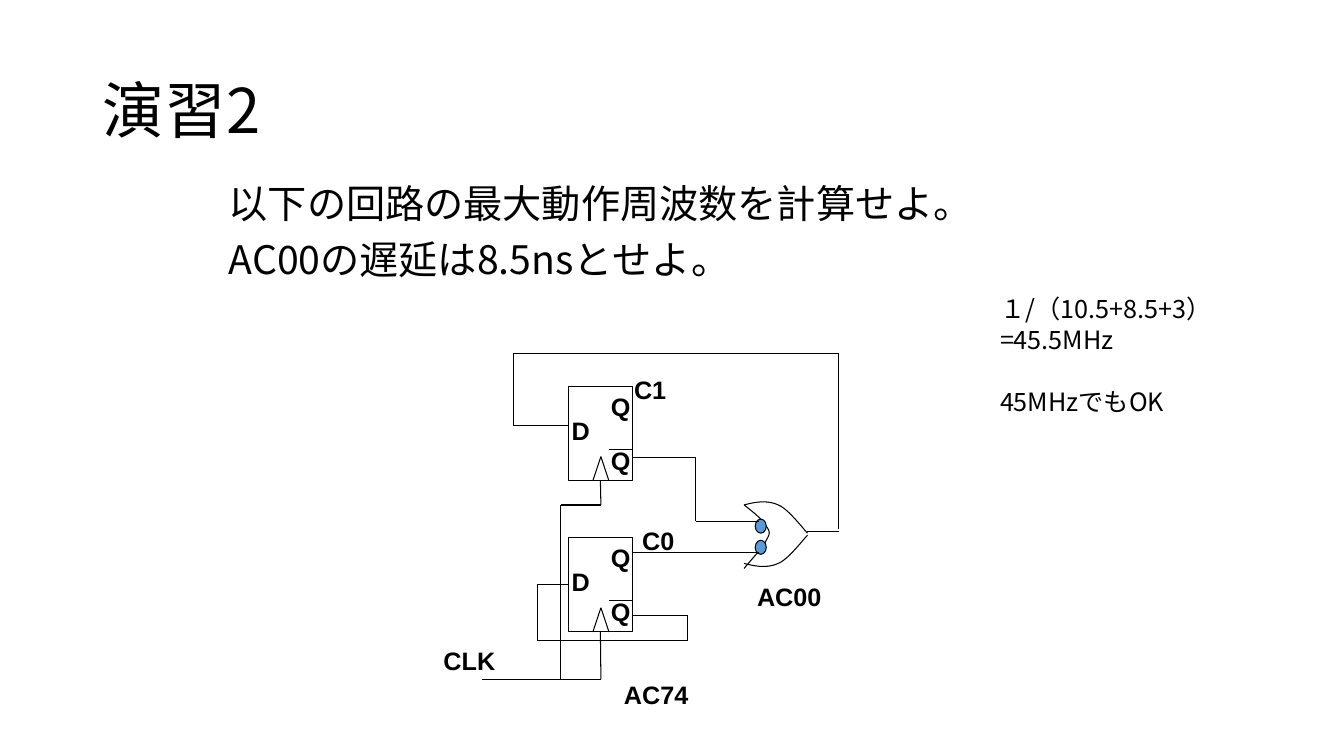
from itertools import pairwise

from lxml import etree
from pptx import Presentation
from pptx import util as u
from pptx.dml.color import RGBColor
from pptx.enum import shapes, text
from pptx.oxml.ns import qn

BLACK = RGBColor(0x00, 0x00, 0x00)
BLUE = RGBColor(0x5B, 0x9B, 0xD5)
LATIN, JAPANESE = "Arial", "Noto Sans CJK JP"


def inches(*values):
    return [u.Inches(value) for value in values]


def format_para(para, size, name, bold=False):
    font = para.font
    font.size, font.name, font.bold = u.Pt(size), name, bold
    font.color.rgb = BLACK
    # East Asian characters take their typeface from a separate element
    props = para._p.pPr.find(qn("a:defRPr"))
    etree.SubElement(props, qn("a:ea"), typeface=name)


def outline(shape):
    shape.line.color.rgb = BLACK
    shape.line.width = u.Pt(0.75)


def add_title(page, words):
    title = page.shapes.title
    title.left, title.top, title.width, title.height = inches(0.92, 0.4, 11.5, 1.45)
    frame = title.text_frame
    frame.text = words
    frame.vertical_anchor = text.MSO_ANCHOR.MIDDLE
    para = frame.paragraphs[0]
    para.alignment = text.PP_ALIGN.LEFT
    para.line_spacing = 0.9
    format_para(para, 44, JAPANESE)


def add_text(page, place, lines, size, pitch, gap):
    frame = page.shapes.add_textbox(*inches(*place)).text_frame
    frame.word_wrap = True
    for number, line in enumerate(lines):
        para = frame.paragraphs[0] if number == 0 else frame.add_paragraph()
        para.text = line
        para.line_spacing = u.Pt(pitch)
        para.space_before = u.Pt(gap if number else 0)
        format_para(para, size, JAPANESE)


def add_label(page, words, left, top, width=0.4):
    frame = page.shapes.add_textbox(*inches(left, top, width, 0.4)).text_frame
    frame.word_wrap = False
    para = frame.paragraphs[0]
    para.text = words
    format_para(para, 18, LATIN, bold=True)


def add_wire(page, *points, start=None):
    """Join the points in turn; start is a (shape, side) to attach to."""
    for number, (begin, end) in enumerate(pairwise(points)):
        line = page.shapes.add_connector(
            shapes.MSO_CONNECTOR.STRAIGHT, *inches(*begin, *end))
        outline(line)
        etree.SubElement(line._element.spPr, qn("a:effectLst"))
        if start and number == 0:
            line.begin_connect(*start)


def add_shape(page, kind, *place):
    shape = page.shapes.add_shape(kind, *inches(*place))
    shape.shadow.inherit = False
    outline(shape)
    return shape


def add_flip_flop(page, top):
    body = add_shape(page, shapes.MSO_SHAPE.RECTANGLE, 5.64, top, 0.63, 0.94)
    body.fill.background()
    add_label(page, "D", 5.57, top + 0.24, 0.38)
    add_label(page, "Q", 5.96, top)
    add_label(page, "Q", 5.96, top + 0.54)
    add_wire(page, (6.04, top + 0.63), (6.27, top + 0.63))
    # Clock input mark
    add_wire(page, (5.88, top + 0.94), (5.96, top + 0.7), (6.04, top + 0.94))
    return body


def bezier(start, first, second, end, steps=12):
    for step in range(1, steps + 1):
        t = step / steps
        weights = ((1 - t) ** 3, 3 * t * (1 - t) ** 2, 3 * t ** 2 * (1 - t), t ** 3)
        yield tuple(sum(w * point[axis] for w, point in
                        zip(weights, (start, first, second, end)))
                    for axis in (0, 1))


def add_curve(page, *points):
    """Draw chained cubic curves: a start, then three points for each curve."""
    builder = page.shapes.build_freeform(*inches(*points[0]))
    for index in range(0, len(points) - 1, 3):
        builder.add_line_segments(
            [inches(*point) for point in bezier(*points[index:index + 4])],
            close=False)
    curve = builder.convert_to_shape()
    curve.shadow.inherit = False
    curve.fill.background()
    outline(curve)


def add_gate(page):
    upper = ((7.38, 5.01), (7.49, 4.98), (7.61, 4.96), (7.72, 5.01),
             (7.82, 5.05), (7.96, 5.24), (8.01, 5.29))
    add_curve(page, *upper)
    add_curve(page, *((x, 10.6 - y) for x, y in upper))
    add_curve(page, (7.38, 5.01), (7.47, 5.08), (7.57, 5.16), (7.6, 5.22),
              (7.64, 5.28), (7.64, 5.29), (7.6, 5.36),
              (7.57, 5.43), (7.47, 5.53), (7.38, 5.64))
    for top in (5.15, 5.36):
        bubble = add_shape(page, shapes.MSO_SHAPE.OVAL, 7.49, top, 0.11, 0.14)
        bubble.fill.solid()
        bubble.fill.fore_color.rgb = BLUE


def main():
    deck = Presentation()
    deck.slide_width, deck.slide_height = inches(13.33, 7.5)
    page = deck.slides.add_slide(deck.slide_layouts[5])

    # Question and answer
    add_title(page, "演習2")
    add_text(page, (2.17, 1.78, 9.15, 1.29),
             ["以下の回路の最大動作周波数を計算せよ。", "AC00の遅延は8.5nsとせよ。"],
             size=28, pitch=30, gap=10)
    add_text(page, (9.82, 2.86, 3.3, 1.31),
             ["１/（10.5+8.5+3）=45.5MHz", "45MHzでもOK"],
             size=18, pitch=22, gap=22)

    # Circuit parts
    low = add_flip_flop(page, 5.33)
    high = add_flip_flop(page, 3.83)
    add_gate(page)

    # Clock wires
    add_wire(page, (5.96, 6.27), (5.96, 6.74), (4.78, 6.74), start=(low, 2))
    add_wire(page, (5.96, 4.77), (5.96, 5.01), (5.56, 5.01), (5.56, 6.74),
             start=(high, 2))

    # Signal wires
    add_wire(page, (6.27, 5.48), (7.53, 5.48))
    add_wire(page, (6.27, 4.54), (6.9, 4.54), (6.9, 5.17), (7.53, 5.17))
    add_wire(page, (5.64, 5.8), (5.33, 5.8), (5.33, 6.35), (6.82, 6.35),
             (6.82, 6.11), (6.27, 6.11), start=(low, 1))
    add_wire(page, (5.64, 4.22), (5.09, 4.22), (5.09, 3.51), (8.32, 3.51),
             (8.32, 5.25))
    add_wire(page, (8, 5.27), (8.32, 5.27))

    # Names
    for words, left, top, width in (
            ("C0", 6.27, 5.16, 0.52), ("C1", 6.19, 3.66, 0.52),
            ("CLK", 4.3, 6.35, 0.72), ("AC74", 6.09, 6.69, 0.91),
            ("AC00", 7.41, 5.72, 0.91)):
        add_label(page, words, left, top, width)

    deck.save("out.pptx")


if __name__ == "__main__":
    main()
